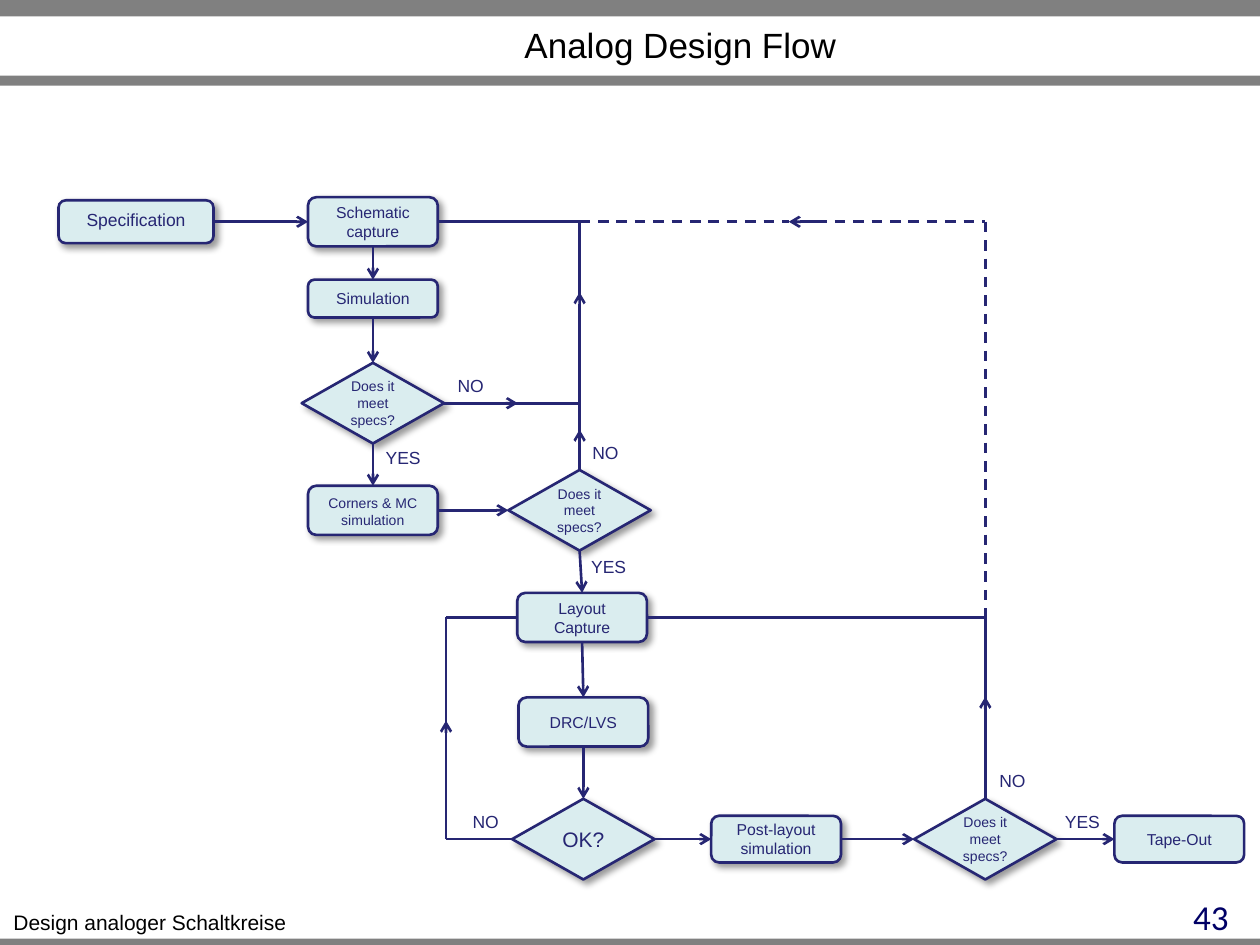
from dataclasses import dataclass

from lxml import etree
from pptx import Presentation
from pptx.dml.color import RGBColor
from pptx.enum.dml import MSO_LINE
from pptx.enum.shapes import MSO_CONNECTOR, MSO_SHAPE
from pptx.enum.text import MSO_ANCHOR as ANCHOR, PP_ALIGN as ALIGN
from pptx.oxml import parse_xml
from pptx.oxml.ns import nsdecls, qn
from pptx.util import Pt

PX = 9144  # 100 px to the inch
WIDTH, HEIGHT = 1000, 750

NAVY = RGBColor(0x26, 0x26, 0x73)
PALE = RGBColor(0xDA, 0xED, 0xEF)
GREY = RGBColor(0x80, 0x80, 0x80)
BLACK = RGBColor(0, 0, 0)
PAGE_BLUE = RGBColor(0, 0, 0x66)

TOP, LEFT, BOTTOM, RIGHT = range(4)
ROUNDED, DECISION = MSO_SHAPE.ROUNDED_RECTANGLE, MSO_SHAPE.FLOWCHART_DECISION
SPECS_QUESTION = "Does it meet specs?"

SHADOW = (
    f'<a:effectLst {nsdecls("a")}>'
    '<a:outerShdw blurRad="50800" dist="38100" dir="2700000" algn="tl" rotWithShape="0">'
    '<a:srgbClr val="000000"><a:alpha val="40000"/></a:srgbClr>'
    '</a:outerShdw></a:effectLst>'
)


def write(shape, text, size, color, align=ALIGN.CENTER, anchor=ANCHOR.TOP,
          wrap=True, font="Arial"):
    frame = shape.text_frame
    frame.text = text
    frame.word_wrap = wrap
    frame.vertical_anchor = anchor
    paragraph = frame.paragraphs[0]
    paragraph.alignment = align
    run_font = paragraph.runs[0].font
    run_font.name, run_font.size = font, Pt(size)
    run_font.color.rgb = color


@dataclass
class Region:
    """Part of the flow chart; all its positions are relative to left, top."""
    slide: object
    left: int
    top: int

    def box(self, x, y, width, height):
        return [round(v * PX) for v in (self.left + x, self.top + y, width, height)]

    def node(self, text, cx, cy, width=103, height=39, size=9, kind=ROUNDED,
             anchor=ANCHOR.MIDDLE, shadow=True):
        """Add a step centred on cx, cy."""
        node = self.slide.shapes.add_shape(
            kind, *self.box(cx - width / 2, cy - height / 2, width, height))
        node.shadow.inherit = False
        if shadow:
            props = node._element.spPr
            props.replace(props.find(qn("a:effectLst")), parse_xml(SHADOW))
        node.fill.solid()
        node.fill.fore_color.rgb = PALE
        node.line.color.rgb = NAVY
        node.line.width = Pt(1.5)
        write(node, text, size, NAVY, anchor=anchor)
        return node

    def decision(self, text, cx, cy, size=8):
        diamond = self.node(text, cx, cy, 113, 64, size, DECISION)
        frame = diamond.text_frame
        frame.margin_left = frame.margin_right = 0
        frame.margin_top = frame.margin_bottom = 0
        return diamond

    def label(self, text, x, y):
        width = 48 if text == "YES" else 41
        label = self.slide.shapes.add_textbox(*self.box(x, y, width, 27))
        write(label, text, 10, NAVY, wrap=False)

    def line(self, start, end, arrow=False, dashed=False):
        """Draw from start to end, each either (x, y) or (node, side)."""
        points = [self.box(*p, 0, 0)[:2] if isinstance(p[0], int) else (0, 0)
                  for p in (start, end)]
        line = self.slide.shapes.add_connector(
            MSO_CONNECTOR.STRAIGHT, *points[0], *points[1])
        if not isinstance(start[0], int):
            line.begin_connect(*start)
        if not isinstance(end[0], int):
            line.end_connect(*end)
        line.line.color.rgb = NAVY
        line.line.width = Pt(1.5)
        if dashed:
            line.line.dash_style = MSO_LINE.DASH
        if arrow:
            etree.SubElement(line.line._get_or_add_ln(), qn("a:tailEnd"), type="arrow")
        etree.SubElement(line._element.spPr, qn("a:effectLst"))

    def arrow(self, start, end):
        self.line(start, end, arrow=True)


def add_frame(slide):
    """Title, grey bars, footer text and page number."""
    page = Region(slide, 0, 0)
    title = slide.shapes.title
    title.left, title.top, title.width, title.height = page.box(130, 14, 820, 38)
    write(title, "Analog Design Flow", 20, BLACK)

    for y, height in ((0, 13), (60, 8), (745, 8)):
        bar = slide.shapes.add_shape(MSO_SHAPE.RECTANGLE, *page.box(0, y, WIDTH, height))
        bar.shadow.inherit = False
        bar.fill.solid()
        bar.fill.fore_color.rgb = GREY
        bar.line.fill.background()

    footer = slide.shapes.add_textbox(*page.box(0, 717, 238, 30))
    write(footer, "Design analoger Schaltkreise", 12, BLACK, wrap=False)
    page_number = slide.shapes.add_textbox(*page.box(752, 706, 233, 31))
    write(page_number, "43", 20, PAGE_BLUE, ALIGN.RIGHT, font="Calibri")


def add_schematic_loop(slide, left, top):
    """Specification to corner simulation; returns the last decision."""
    area = Region(slide, left, top)
    column, loop = 249, 413
    specification = area.node("Specification", 61, 20, 123, 34, 10, anchor=ANCHOR.TOP)
    schematic = area.node("Schematic capture", column, 20)
    simulation = area.node("Simulation", column, 81, height=30)
    check = area.decision(SPECS_QUESTION, column, 164)
    corners = area.node("Corners & MC simulation", column, 249, size=8, anchor=ANCHOR.TOP)
    corner_check = area.decision(SPECS_QUESTION, loop, 249)

    area.arrow((specification, RIGHT), (schematic, LEFT))
    steps = (schematic, simulation, check, corners)
    for above, below in zip(steps, steps[1:]):
        area.arrow((above, BOTTOM), (below, TOP))
    area.arrow((corners, RIGHT), (corner_check, LEFT))

    area.line((check, RIGHT), (loop, 164))
    area.arrow((329, 164), (364, 164))
    area.line((corner_check, TOP), (loop, 106))
    area.arrow((loop, 203), (loop, 185))
    area.arrow((loop, 116), (loop, 76))
    area.line((loop, 81), (loop, 20))
    area.line((loop, 20), (schematic, RIGHT))

    for text, x, y in (("NO", 306, 137), ("YES", 249, 194),
                       ("NO", 413, 190), ("YES", 412, 280)):
        area.label(text, x, y)
    return corner_check


def add_layout_loop(slide, left, top):
    """Layout capture to tape-out; returns the first step."""
    area = Region(slide, left, top)
    row, loop = 196, 428
    layout = area.node("Layout Capture", 108, 20)
    rule_check = area.node("DRC/LVS", 109, 103)
    approval = area.decision("OK?", 109, row, 12)
    post_layout = area.node("Post-layout simulation", 262, row, height=37)
    final_check = area.decision(SPECS_QUESTION, loop, row)
    tape_out = area.node("Tape-Out", 582, row, height=37, shadow=False)

    area.arrow((layout, BOTTOM), (rule_check, TOP))
    area.arrow((rule_check, BOTTOM), (approval, TOP))
    steps = (approval, post_layout, final_check, tape_out)
    for before, after in zip(steps, steps[1:]):
        area.arrow((before, RIGHT), (after, LEFT))

    area.line((approval, LEFT), (0, row))
    area.arrow((0, row), (0, 102))
    area.line((0, 20), (0, 105))
    area.line((0, 20), (layout, LEFT))
    area.line((final_check, TOP), (loop, 20))
    area.arrow((loop, 105), (loop, 83))
    area.line((loop, 20), (layout, RIGHT))

    for text, x, y in (("NO", 11, 169), ("NO", 429, 136), ("YES", 481, 169)):
        area.label(text, x, y)
    return layout


def add_feedback(slide, left, top, width, height):
    """Dashed way back from the layout to the schematic."""
    area = Region(slide, left, top)
    area.line((0, 0), (166, 0), dashed=True)
    area.line((188, 0), (width, 0), dashed=True)
    area.arrow((188, 0), (166, 0))
    area.line((width, 0), (width, height), dashed=True)


def main():
    deck = Presentation()
    deck.slide_width, deck.slide_height = WIDTH * PX, HEIGHT * PX
    slide = deck.slides.add_slide(deck.slide_layouts[5])
    add_frame(slide)
    corner_check = add_schematic_loop(slide, 47, 156)
    layout = add_layout_loop(slide, 354, 470)
    Region(slide, 0, 0).arrow((corner_check, BOTTOM), (layout, TOP))
    add_feedback(slide, 460, 176, 322, 314)
    deck.save("out.pptx")


if __name__ == "__main__":
    main()
